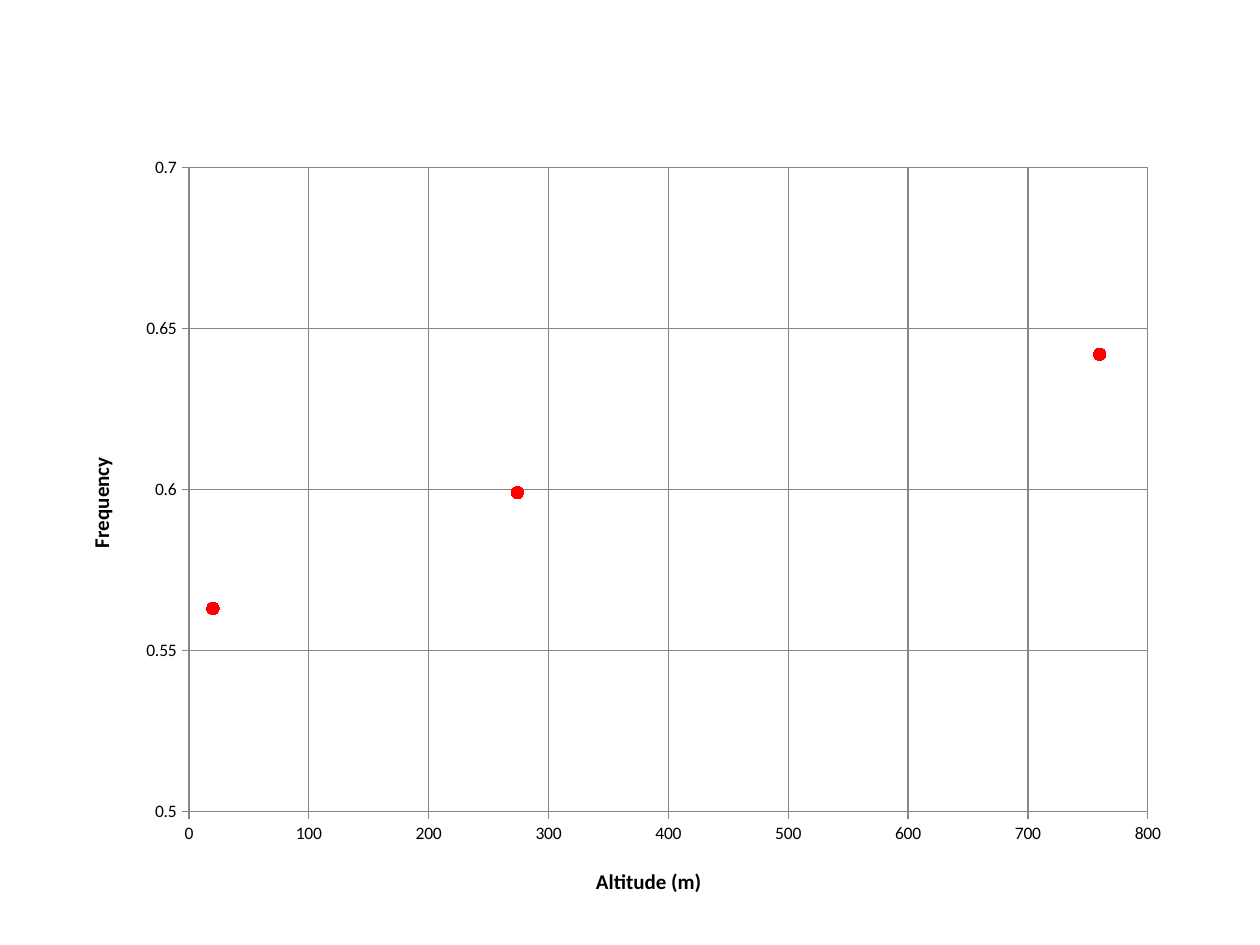
import pptx
import pptx.chart.data
import pptx.dml.color
import pptx.enum.chart
import pptx.oxml
import pptx.oxml.ns
import pptx.util
from pptx.util import Inches

POINTS = [(760, 0.642), (274, 0.599), (20, 0.563)]
CHART = (0.58, 1.25, 8.83, 5.94)
PLOT = (1.5, 1.33, 7.61, 5.11)
X_AXIS = ("Altitude (m)", 0, 800, 100, "0", (4.7, 6.85))
Y_AXIS = ("Frequency", 0.5, 0.7, 0.05, "General", (0.66, 3.6))
FONT = "Calibri"
BLACK = pptx.dml.color.RGBColor(0x00, 0x00, 0x00)
GRAY = pptx.dml.color.RGBColor(0x86, 0x86, 0x86)
RED = pptx.dml.color.RGBColor(0xFF, 0x00, 0x00)


def set_font(font, size, bold):
    font.name = FONT
    font.size = pptx.util.Pt(size)
    font.bold = bold
    font.color.rgb = BLACK


def set_layout(parent, index, left, top, width=None, height=None):
    for old in parent.findall(pptx.oxml.ns.qn("c:layout")):
        parent.remove(old)
    fields = [("xMode", "edge"), ("yMode", "edge")]
    if width:
        fields.insert(0, ("layoutTarget", "inner"))
    fields += [("x", (left - CHART[0]) / CHART[2]), ("y", (top - CHART[1]) / CHART[3])]
    if width:
        fields += [("w", width / CHART[2]), ("h", height / CHART[3])]
    body = "".join(f'<c:{name} val="{value}"/>' for name, value in fields)
    parent.insert(index, pptx.oxml.parse_xml(
        f'<c:layout {pptx.oxml.ns.nsdecls("c")}><c:manualLayout>{body}</c:manualLayout></c:layout>'))


def style_line(line):
    line.color.rgb = GRAY
    line.width = pptx.util.Pt(0.75)


def style_axis(axis, title, low, high, step, number_format, title_at):
    axis.minimum_scale, axis.maximum_scale, axis.major_unit = low, high, step
    axis.has_major_gridlines = True
    axis.major_tick_mark = pptx.enum.chart.XL_TICK_MARK.CROSS
    axis.minor_tick_mark = pptx.enum.chart.XL_TICK_MARK.NONE
    axis.tick_labels.number_format = number_format
    axis.tick_labels.number_format_is_linked = False
    set_font(axis.tick_labels.font, 10, False)
    style_line(axis.format.line)
    style_line(axis.major_gridlines.format.line)
    tf = axis.axis_title.text_frame
    tf.text = title
    set_font(tf.paragraphs[0].runs[0].font, 12, True)
    set_layout(axis.axis_title.element, 1, *title_at)


prs = pptx.Presentation()
prs.slide_width, prs.slide_height = Inches(10), Inches(7.5)
s = prs.slides.add_slide(prs.slide_layouts[6])

data = pptx.chart.data.XyChartData()
series_data = data.add_series("Series 1")
for altitude, frequency in POINTS:
    series_data.add_data_point(altitude, frequency)

chart = s.shapes.add_chart(pptx.enum.chart.XL_CHART_TYPE.XY_SCATTER,
                           *map(Inches, CHART), data).chart
chart.has_title = False
chart.has_legend = False
set_font(chart.font, 10, False)
chart.plots[0].vary_by_categories = False
set_layout(chart.element.find(".//" + pptx.oxml.ns.qn("c:plotArea")), 0, *PLOT)
style_axis(chart.category_axis, *X_AXIS)
style_axis(chart.value_axis, *Y_AXIS)

series = chart.plots[0].series[0]
series.smooth = False
series.format.line.fill.background()
marker = series.marker
marker.style = pptx.enum.chart.XL_MARKER_STYLE.CIRCLE
marker.size = 7
marker.format.fill.solid()
marker.format.fill.fore_color.rgb = RED
marker.format.line.color.rgb = RED

prs.save("out.pptx")
